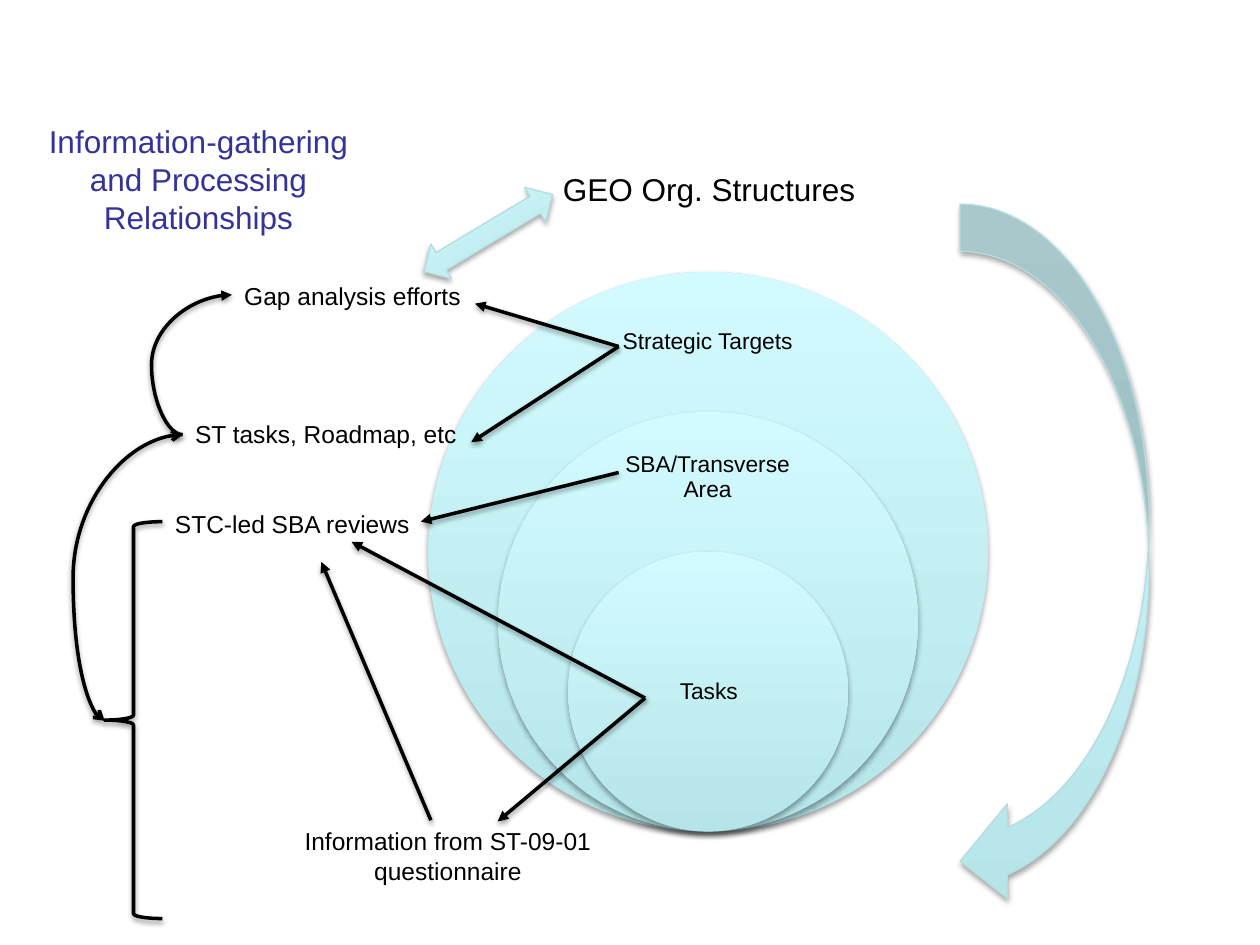
import pptx
import pptx.util
import pptx.dml.color
import pptx.enum.shapes
import pptx.enum.text
from lxml import etree
from pptx.oxml.ns import qn

SHAPE = pptx.enum.shapes.MSO_SHAPE
CONNECTOR = pptx.enum.shapes.MSO_CONNECTOR
ALIGN = pptx.enum.text.PP_ALIGN
FONT = "Arial"
COLORS = {"ink": "000000", "title": "333399", "deep": "B5E5E9",
          "pale": "D3FBFF", "edge": "B6DCDF"}

# All lengths are in cells of a grid of 100 columns by 75 rows.
COLUMNS, ROWS = 100, 75
CELL = pptx.util.Inches(10) / COLUMNS

# Nested circles share a centre column and a bottom row.
CENTRE, BOTTOM, OUTER = 56.2, 66, 44.4
# share of the outer circle, label, label box
LEVELS = [
    (1, "Strategic Targets", (48.4, 23.8, 15.5, 6.7)),
    (0.75, "SBA/Transverse Area", (48.4, 34.8, 15.5, 6.2)),
    (0.5, "Tasks", (48.4, 49.4, 15.7, 11.1)),
]

# lines, box, size, colour, alignment, wrap
CAPTIONS = [
    (["Information from ST-09-01", "questionnaire"],
     (23.1, 65.1, 24.9, 5.7), 14, "ink", ALIGN.CENTER, False),
    (["STC-led SBA reviews"], (12.9, 39.9, 20.8, 3.4), 14, "ink", ALIGN.LEFT, False),
    (["ST tasks, Roadmap, etc"], (14.5, 32.8, 22.9, 3.4), 14, "ink", ALIGN.LEFT, False),
    (["Gap analysis efforts"], (18.4, 21.8, 19.3, 3.4), 14, "ink", ALIGN.LEFT, False),
    (["GEO Org. Structures"], (43.7, 13, 25.4, 4), 18, "ink", ALIGN.LEFT, False),
    (["Information-gathering and Processing Relationships"],
     (1.2, 9.2, 29.1, 10.1), 18, "title", ALIGN.CENTER, True),
]

TARGETS_EDGE, AREA_EDGE, TASKS_EDGE = (49.1, 27.5), (49.1, 37.5), (51.2, 55.4)
ROADMAP_EDGE = (14.5, 34.5)
STRAIGHT_ARROWS = [
    ((34.2, 65.1), (25.5, 44.6)),
    (TASKS_EDGE, (27.9, 43)),
    (TASKS_EDGE, (39.5, 65.2)),
    (AREA_EDGE, (33.4, 41.4)),
    (TARGETS_EDGE, (37.7, 24.1)),
    (TARGETS_EDGE, (37.4, 35.1)),
]
# start, end, bend in thousandths of a percent, head, tail
CURVED_ARROWS = [
    (ROADMAP_EDGE, (18.4, 23.4), -63500, None, "triangle"),
    (ROADMAP_EDGE, (8.3, 57.2), 140300, "arrow", "arrow"),
]
BLOCK_ARROWS = [
    (SHAPE.LEFT_RIGHT_ARROW, (32.8, 16.9, 11.9, 3.2), 329),
    (SHAPE.CURVED_LEFT_ARROW, (76.2, 16.2, 15, 55.9), 0),
]
BRACE = (8.3, 41.4, 4.6, 31.5)


def cells(values):
    return [round(value * CELL) for value in values]


def rgb(name):
    return pptx.dml.color.RGBColor.from_string(COLORS[name])


def add_shadow(shape, opacity, distance):
    """Give the shape a soft shadow straight below; call after its line is set."""
    properties = shape._element.spPr
    effects = properties.find(qn("a:effectLst"))
    if effects is None:
        effects = etree.SubElement(properties, qn("a:effectLst"))
    shadow = etree.SubElement(
        effects, qn("a:outerShdw"), blurRad=str(pptx.util.Pt(3.1)),
        dist=str(pptx.util.Pt(distance)), dir="5400000", rotWithShape="0")
    color = etree.SubElement(shadow, qn("a:srgbClr"), val=COLORS["ink"])
    etree.SubElement(color, qn("a:alpha"), val=str(opacity * 1000))


def set_line(shape, color, width):
    shape.line.color.rgb = rgb(color)
    shape.line.width = pptx.util.Pt(width)


def add_glossy(shapes, kind, box, outlined):
    shape = shapes.add_shape(kind, *cells(box))
    shape.fill.gradient()
    shape.fill.gradient_angle = 90
    for stop, color in zip(shape.fill.gradient_stops, ("deep", "pale")):
        stop.color.rgb = rgb(color)
    if outlined:
        set_line(shape, "edge", 0.75)
    else:
        shape.line.fill.background()
    shape.shadow.inherit = False
    add_shadow(shape, 35, 1.8)
    return shape


def add_text(shapes, lines, box, size, color, align, wrap):
    frame = shapes.add_textbox(*cells(box)).text_frame
    frame.word_wrap = wrap
    for index, line in enumerate(lines):
        paragraph = frame.add_paragraph() if index else frame.paragraphs[0]
        paragraph.alignment = align
        run = paragraph.add_run()
        run.text = line
        run.font.name = FONT
        run.font.size = pptx.util.Pt(size)
        run.font.color.rgb = rgb(color)
    return frame


def add_arrow(shapes, kind, start, end, head, tail):
    arrow = shapes.add_connector(kind, *cells(start + end))
    set_line(arrow, "ink", 2)
    outline = arrow.line._get_or_add_ln()
    for tag, style in (("a:headEnd", head), ("a:tailEnd", tail)):
        if style:
            etree.SubElement(outline, qn(tag), type=style)
    add_shadow(arrow, 38, 1.6)
    return arrow


def add_circles(shapes):
    circles = shapes.add_group_shape().shapes
    for share, label, box in LEVELS:
        size = OUTER * share
        add_glossy(circles, SHAPE.OVAL,
                   (CENTRE - size / 2, BOTTOM - size, size, size), False)
        frame = add_text(circles, [label], box, 13, "ink", ALIGN.CENTER, True)
        frame.vertical_anchor = pptx.enum.text.MSO_ANCHOR.MIDDLE
        frame.margin_top = frame.margin_bottom = pptx.util.Inches(0.1)
        frame.paragraphs[0].line_spacing = 0.9


def main():
    deck = pptx.Presentation()
    deck.slide_width, deck.slide_height = cells((COLUMNS, ROWS))
    shapes = deck.slides.add_slide(deck.slide_layouts[6]).shapes

    add_circles(shapes)
    for caption in CAPTIONS:
        frame = add_text(shapes, *caption)
        frame.auto_size = pptx.enum.text.MSO_AUTO_SIZE.SHAPE_TO_FIT_TEXT

    for start, end in STRAIGHT_ARROWS:
        add_arrow(shapes, CONNECTOR.STRAIGHT, start, end, None, "triangle")

    brace = shapes.add_shape(SHAPE.LEFT_BRACE, *cells(BRACE))
    brace.fill.background()
    set_line(brace, "ink", 2)
    brace.shadow.inherit = False
    add_shadow(brace, 38, 1.6)

    for start, end, bend, head, tail in CURVED_ARROWS:
        curve = add_arrow(shapes, CONNECTOR.CURVE, start, end, head, tail)
        guides = curve._element.spPr.find(qn("a:prstGeom")).find(qn("a:avLst"))
        etree.SubElement(guides, qn("a:gd"), name="adj1", fmla=f"val {bend}")

    for kind, box, rotation in BLOCK_ARROWS:
        add_glossy(shapes, kind, box, True).rotation = rotation

    deck.save("out.pptx")


if __name__ == "__main__":
    main()
